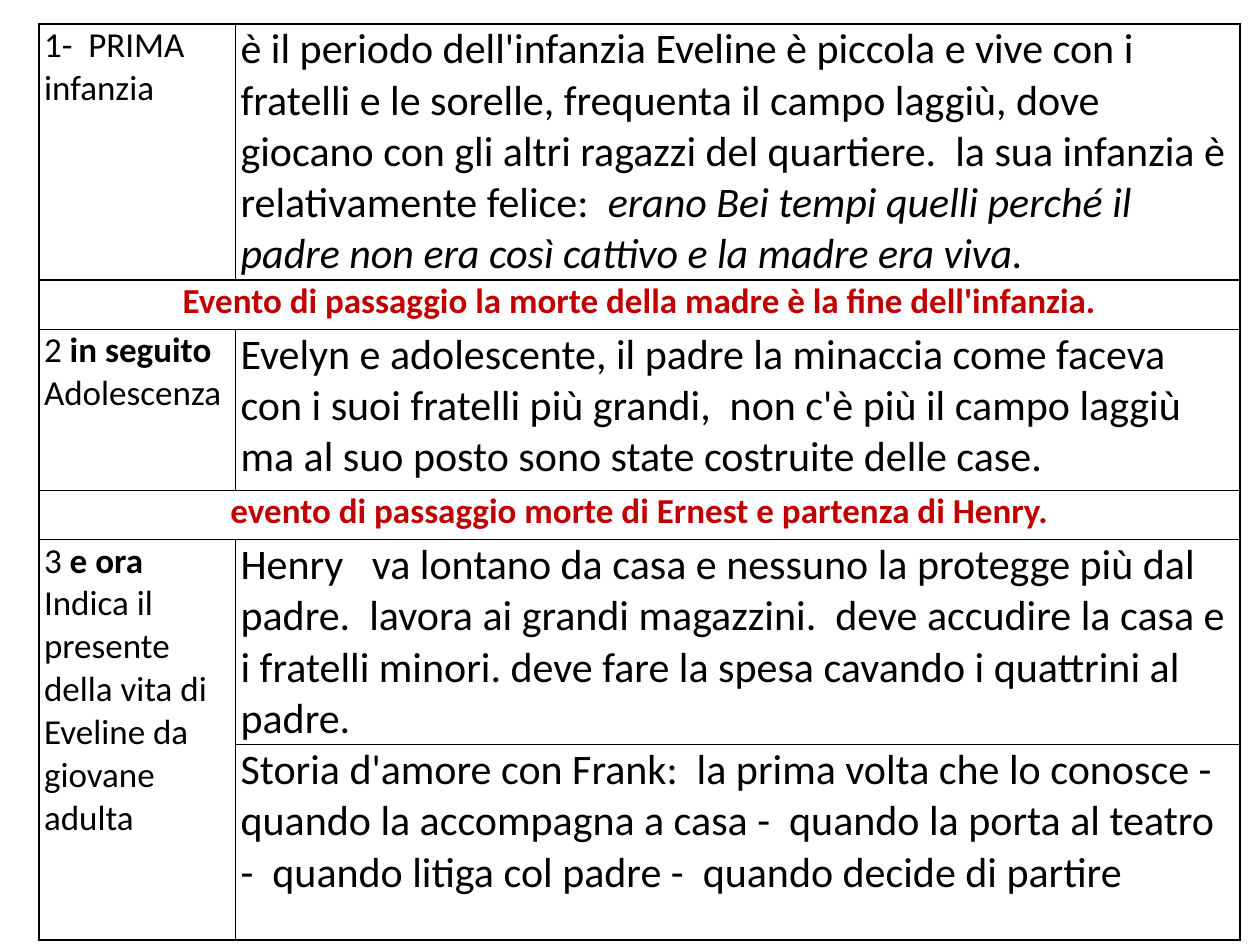
from lxml.etree import SubElement
from pptx import Presentation
from pptx.dml.color import RGBColor
from pptx.enum.text import PP_ALIGN
from pptx.oxml.ns import qn
from pptx.util import Inches, Pt

HUES = {"ink": "000000", "event": "C00000"}
COLS = [1.56, 7.97]
ROWS = [1.99, 0.39, 1.28, 0.39, 1.57, 1.55]
SIDES = ["a:lnL", "a:lnR", "a:lnT", "a:lnB"]

STAGES = {
    0: [[("1-  PRIMA   infanzia", {})]],
    2: [[("2 ", {}), ("in seguito", {"bold": True})], [("Adolescenza", {})]],
    4: [[("3 ", {}), ("e ora", {"bold": True})],
        [("Indica il presente della vita di Eveline da giovane adulta", {})]],
}
EVENTS = {
    1: "Evento di passaggio la morte della madre è la fine dell'infanzia.",
    3: "evento di passaggio morte di Ernest e partenza di Henry.",
}
STORY = {
    0: [("è il periodo dell'infanzia Eveline è piccola e vive con i fratelli e le "
         "sorelle, frequenta il campo laggiù, dove giocano con gli altri ragazzi del "
         "quartiere.  la sua infanzia è relativamente felice:  ", {}),
        ("erano Bei tempi quelli perché il padre non era così cattivo e la madre "
         "era viva.", {"italic": True})],
    2: [("Evelyn e adolescente, il padre la minaccia come faceva con i suoi fratelli "
         "più grandi,  non c'è più il campo laggiù ma al suo posto sono state "
         "costruite delle case.", {})],
    4: [("Henry   va lontano da casa e nessuno la protegge più dal padre.  lavora ai "
         "grandi magazzini.  deve accudire la casa e i fratelli minori. deve fare la "
         "spesa cavando i quattrini al padre.", {})],
    5: [("Storia d'amore con Frank:  la prima volta che lo conosce -  quando la "
         "accompagna a casa -  quando la porta al teatro -  quando litiga col padre "
         "-  quando decide di partire", {})],
}


def write(para, text, size=20, hue="ink", bold=False, italic=False):
    """Add a run of text with its format to a paragraph."""
    run = para.add_run()
    run.text = text
    font = run.font
    font.name, font.size = "Calibri", Pt(size)
    font.bold, font.italic = bold, italic
    font.color.rgb = RGBColor.from_string(HUES[hue])


def fill(cell, paras, align=PP_ALIGN.LEFT, **style):
    """Write paragraphs of styled runs into a cell."""
    frame = cell.text_frame
    for i, runs in enumerate(paras):
        para = frame.add_paragraph() if i else frame.paragraphs[0]
        para.alignment = align
        for text, extra in runs:
            write(para, text, **style, **extra)


def frame_cell(cell):
    """Give a cell thin black borders, tight margins and no fill."""
    cell.margin_left = cell.margin_right = Inches(0.04)
    cell.margin_top = cell.margin_bottom = 0
    props = cell._tc.get_or_add_tcPr()
    for side in SIDES:
        line = SubElement(props, qn(side), w=str(Pt(1)))
        paint = SubElement(line, qn("a:solidFill"))
        SubElement(paint, qn("a:srgbClr"), val=HUES["ink"])
    cell.fill.background()


def add_grid(slide):
    """Add the bordered table with its merged cells."""
    grid = slide.shapes.add_table(len(ROWS), len(COLS), Inches(0.31), Inches(0.19),
                                  Inches(sum(COLS)), Inches(sum(ROWS))).table
    grid.first_row = grid.horz_banding = False
    for col, width in zip(grid.columns, COLS):
        col.width = Inches(width)
    for row, height in zip(grid.rows, ROWS):
        row.height = Inches(height)
    for cell in grid.iter_cells():
        frame_cell(cell)
    for row in EVENTS:
        grid.cell(row, 0).merge(grid.cell(row, 1))
    grid.cell(4, 0).merge(grid.cell(5, 0))
    return grid


def main():
    """Build the slide and save it."""
    deck = Presentation()
    deck.slide_width, deck.slide_height = Inches(10), Inches(7.5)
    grid = add_grid(deck.slides.add_slide(deck.slide_layouts[6]))
    for row, paras in STAGES.items():
        fill(grid.cell(row, 0), paras)
    for row, text in EVENTS.items():
        fill(grid.cell(row, 0), [[(text, {})]], PP_ALIGN.CENTER, hue="event", bold=True)
    for row, runs in STORY.items():
        fill(grid.cell(row, 1), [runs], size=24)
    deck.save("out.pptx")


if __name__ == "__main__":
    main()
